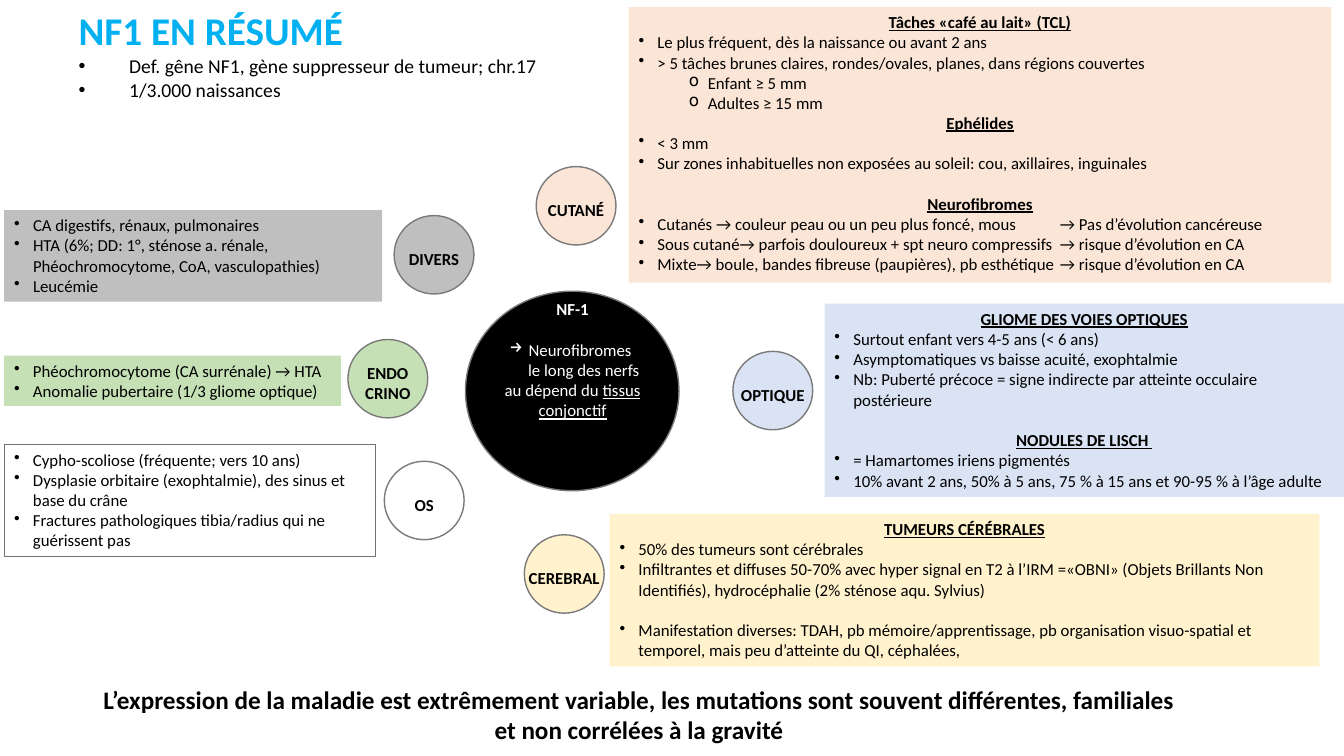
from dataclasses import dataclass
from typing import NamedTuple

from lxml.etree import SubElement
from pptx import Presentation
from pptx.dml.color import RGBColor
from pptx.enum.shapes import MSO_SHAPE as Shape
from pptx.enum.text import MSO_ANCHOR as Anchor, MSO_AUTO_SIZE as AutoSize, PP_ALIGN as Align
from pptx.oxml.ns import qn
from pptx.util import Pt


@dataclass(frozen=True)
class Theme:
    font: str = "Calibri"
    ink: str = "000000"
    paper: str = "FFFFFF"
    accent: str = "00B0F0"
    outline: str = "7A7A7A"
    frame: str = "767171"
    skin: str = "FBE5D6"
    eye: str = "DAE3F3"
    brain: str = "FFF2CC"
    endocrine: str = "C5E0B4"
    misc: str = "BFBFBF"
    title: float = 28
    lead: float = 14
    body: float = 12
    closing: float = 18
    line: float = 14.65


class Box(NamedTuple):
    left: float
    top: float
    width: float
    height: float

    def inner(self, dx, dy, width, height):
        return Box(self.left + dx, self.top + dy, width, height)

    def lengths(self):
        return [Pt(value) for value in self]


class Topic(NamedTuple):
    label: str
    color: str
    panel: Box
    circle_offset: tuple
    lines: list
    frame: str = ""


THEME = Theme()
HEAD, ITEM, SUB = "head", "item", "sub"
GAP = "gap "
CIRCLE = (57, 56)
ARROW_TAB = 301

TOPICS = [
    Topic("CUTANÉ", THEME.skin, Box(449, 5, 502, 197), (-66, 114), [
        (HEAD, "Tâches «café au lait» (TCL)"),
        (ITEM, "Le plus fréquent, dès la naissance ou avant 2 ans"),
        (ITEM, "> 5 tâches brunes claires, rondes/ovales, planes, dans régions couvertes"),
        (SUB, "Enfant ≥ 5 mm"),
        (SUB, "Adultes ≥ 15 mm"),
        (HEAD, "Ephélides"),
        (ITEM, "< 3 mm"),
        (ITEM, "Sur zones inhabituelles non exposées au soleil: cou, axillaires, inguinales"),
        (GAP + HEAD, "Neurofibromes"),
        (ITEM, "Cutanés → couleur peau ou un peu plus foncé, mous\t→ Pas d’évolution cancéreuse"),
        (ITEM, "Sous cutané→ parfois douloureux + spt neuro compressifs\t→ risque d’évolution en CA"),
        (ITEM, "Mixte→ boule, bandes fibreuse (paupières), pb esthétique\t→ risque d’évolution en CA"),
    ]),
    Topic("OPTIQUE", THEME.eye, Box(589, 217, 371, 138), (-65.5, 34), [
        (HEAD, "GLIOME DES VOIES OPTIQUES"),
        (ITEM, "Surtout enfant vers 4-5 ans (< 6 ans)"),
        (ITEM, "Asymptomatiques vs baisse acuité, exophtalmie"),
        (ITEM, "Nb: Puberté précoce = signe indirecte par atteinte occulaire postérieure"),
        (GAP + HEAD, "NODULES DE LISCH "),
        (ITEM, "= Hamartomes iriens pigmentés"),
        (ITEM, "10% avant 2 ans, 50% à 5 ans, 75 % à 15 ans et 90-95 % à l’âge adulte"),
    ]),
    Topic("CEREBRAL", THEME.brain, Box(435.5, 367, 507, 109), (-61, 15), [
        (HEAD, "TUMEURS CÉRÉBRALES"),
        (ITEM, "50% des tumeurs sont cérébrales"),
        (ITEM, "Infiltrantes et diffuses 50-70% avec hyper signal en T2 à l’IRM =«OBNI» "
               "(Objets Brillants Non Identifiés), hydrocéphalie (2% sténose aqu. Sylvius)"),
        (GAP + ITEM, "Manifestation diverses: TDAH, pb mémoire/apprentissage, pb organisation "
                     "visuo-spatial et temporel, mais peu d’atteinte du QI, céphalées,"),
    ]),
    Topic("OS", THEME.paper, Box(3, 317.5, 265.5, 80), (271.5, 12), [
        (ITEM, "Cypho-scoliose (fréquente; vers 10 ans)"),
        (ITEM, "Dysplasie orbitaire (exophtalmie), des sinus et base du crâne"),
        (ITEM, "Fractures pathologiques tibia/radius qui ne guérissent pas"),
    ], THEME.frame),
    Topic("ENDO\nCRINO", THEME.endocrine, Box(3, 254, 240.5, 36), (245.5, -11.5), [
        (ITEM, "Phéochromocytome (CA surrénale) → HTA"),
        (ITEM, "Anomalie pubertaire (1/3 gliome optique)"),
    ]),
    Topic("DIVERS", THEME.misc, Box(3, 150, 270, 65.5), (278.5, 4), [
        (ITEM, "CA digestifs, rénaux, pulmonaires"),
        (ITEM, "HTA (6%; DD: 1°, sténose a. rénale, Phéochromocytome, CoA, vasculopathies)"),
        (ITEM, "Leucémie"),
    ]),
]


def rgb(color):
    return RGBColor.from_string(color)


def style(paragraph, size, color=THEME.ink, bold=False, underline=False):
    for run in paragraph.runs:
        font = run.font
        font.name, font.size = THEME.font, Pt(size)
        font.bold, font.underline = bold, underline
        font.color.rgb = rgb(color)


def indent(paragraph, margin, first):
    properties = paragraph._p.get_or_add_pPr()
    properties.set("marL", str(Pt(margin)))
    properties.set("indent", str(Pt(first)))
    return properties


def bullet(paragraph, mark, margin, hang):
    properties = indent(paragraph, margin, -hang)
    SubElement(properties, qn("a:buChar")).set("char", mark)
    return properties


def fill_lines(frame, lines):
    frame.text = "\n".join(text for _, text in lines)
    for paragraph, (kind, text) in zip(frame.paragraphs, lines):
        heading = kind.endswith(HEAD)
        paragraph.alignment = Align.CENTER if heading else Align.LEFT
        if kind == SUB:
            paragraph.level = 1
            bullet(paragraph, "o", 49.5, 13.5)
        elif not heading:
            properties = bullet(paragraph, "•", 13.5, 13.5)
            if "\t" in text:
                tab = SubElement(SubElement(properties, qn("a:tabLst")), qn("a:tab"))
                tab.set("pos", str(Pt(ARROW_TAB)))
                tab.set("algn", "l")
        if kind.startswith(GAP):
            paragraph.space_before = Pt(THEME.line)
        style(paragraph, THEME.body, bold=heading, underline=heading)


def add_area(slide, preset, box, color, outline="", weight=1):
    area = slide.shapes.add_shape(preset, *box.lengths())
    area.shadow.inherit = False
    area.fill.solid()
    area.fill.fore_color.rgb = rgb(color)
    if outline:
        area.line.color.rgb = rgb(outline)
        area.line.width = Pt(weight)
    else:
        area.line.fill.background()
    return area


def add_text(slide, box):
    frame = slide.shapes.add_textbox(*box.lengths()).text_frame
    frame.word_wrap = True
    return frame


def add_topic(slide, topic):
    circle = add_area(slide, Shape.OVAL, topic.panel.inner(*topic.circle_offset, *CIRCLE),
                      topic.color, THEME.outline)
    label = circle.text_frame
    label.word_wrap = False
    label.vertical_anchor = Anchor.MIDDLE
    label.margin_left = label.margin_right = label.margin_bottom = 0
    label.margin_top = Pt(6)
    label.text = topic.label
    for paragraph in label.paragraphs:
        paragraph.alignment = Align.CENTER
        style(paragraph, THEME.body, bold=True)

    panel = add_area(slide, Shape.RECTANGLE, topic.panel, topic.color, topic.frame, 0.75)
    panel.text_frame.word_wrap = True
    panel.text_frame.vertical_anchor = Anchor.TOP
    fill_lines(panel.text_frame, topic.lines)


def add_hub(slide, box):
    add_area(slide, Shape.OVAL, box, THEME.ink, THEME.outline)
    frame = add_text(slide, box.inner(17.5, 2, 118, 94))
    frame.text = "NF-1\nNeurofibromes \nle long des nerfs au dépend du "
    name, tumour, tissue = frame.paragraphs
    tissue.add_run().text = "tissus conjonctif"
    bullet(tumour, "→", 13.5, 13.5)
    indent(tissue, 0, 16)
    tumour.space_before = Pt(THEME.line)
    for paragraph in frame.paragraphs:
        paragraph.alignment = Align.CENTER
        style(paragraph, THEME.body, THEME.paper, bold=paragraph.text == name.text)
    tissue.runs[-1].font.underline = True


def add_header(slide, box):
    title, facts = slide.placeholders
    title.text_frame.text = "NF1 EN RÉSUMÉ"
    facts.text_frame.text = "Def. gêne NF1, gène suppresseur de tumeur; chr.17\n1/3.000 naissances"
    parts = [(title, box.inner(0, 0, box.width, 41)),
             (facts, box.inner(0, 34, box.width, box.height - 34))]
    for part, place in parts:
        part.left, part.top, part.width, part.height = place.lengths()
        part.text_frame.auto_size = AutoSize.NONE
        part.text_frame.vertical_anchor = Anchor.TOP
        for paragraph in part.text_frame.paragraphs:
            paragraph.alignment = Align.LEFT
            paragraph.space_before = Pt(0)
    style(title.text_frame.paragraphs[0], THEME.title, THEME.accent, bold=True)
    for fact in facts.text_frame.paragraphs:
        bullet(fact, "•", 36, 36)
        style(fact, THEME.lead)


def add_conclusion(slide, box):
    frame = add_text(slide, box)
    frame.text = ("L’expression de la maladie est extrêmement variable, les mutations sont "
                  "souvent différentes, familiales et non corrélées à la gravité")
    frame.paragraphs[0].alignment = Align.CENTER
    style(frame.paragraphs[0], THEME.closing, bold=True)


def main():
    deck = Presentation()
    deck.slide_width, deck.slide_height = Pt(960), Pt(540)
    slide = deck.slides.add_slide(deck.slide_layouts[1])
    add_header(slide, Box(49, 1, 344, 80))
    add_hub(slide, Box(332.5, 208, 152.5, 142.5))
    for topic in TOPICS:
        add_topic(slide, topic)
    add_conclusion(slide, Box(66, 485, 781, 51))
    deck.save("out.pptx")


if __name__ == "__main__":
    main()
